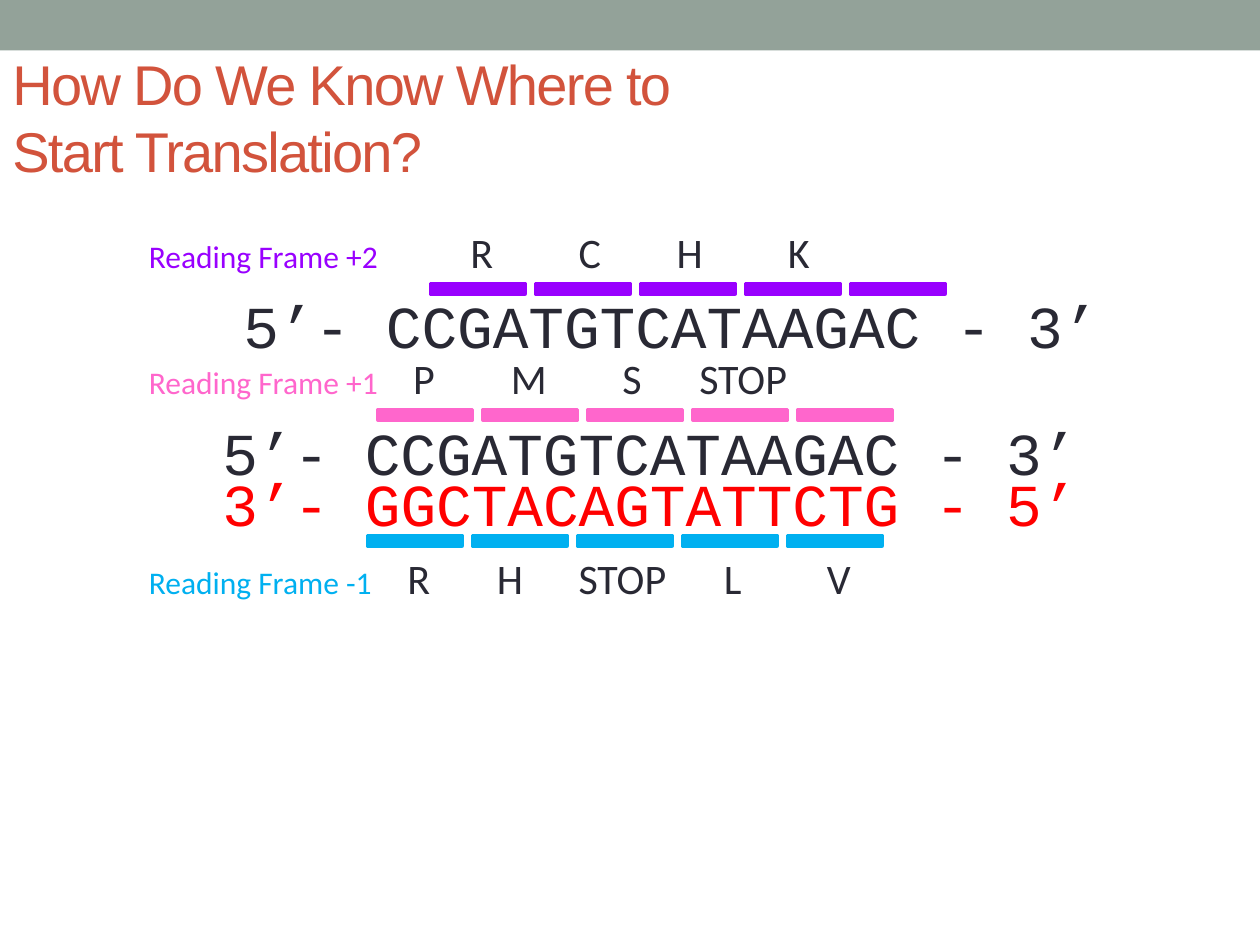
import pptx
import pptx.dml.color
import pptx.enum.shapes
import pptx.enum.text
import pptx.oxml
import pptx.oxml.ns
import pptx.util
from lxml import etree

PX = 7620  # EMU per px, 120 px to the inch
COLORS = {
    "band": "93A299",
    "title": "D2533C",
    "text": "292934",
    "complement": "FF0000",
    "plus1": "FF66CC",
    "plus2": "9900FF",
    "minus1": "00B0F0",
}

# Strand: text, colour, left, top, width
STRANDS = [
    ("5’- CCGATGTCATAAGAC - 3’", "text", 220, 269, 840),
    ("5’- CCGATGTCATAAGAC - 3’", "text", 200, 390, 840),
    ("3’- GGCTACAGTATTCTG - 5’", "complement", 200, 439, 880),
]

# Frame: name, colour, label top, first bar left, bar top, {tab centre: amino acid}
FRAMES = [
    ("Reading Frame +2", "plus2", 210, 410, 270,
     {317: "R", 420: "C", 515: "H", 619: "K"}),
    ("Reading Frame +1", "plus1", 330, 360, 390,
     {262: "P", 362: "M", 460: "S", 566: "STOP"}),
    ("Reading Frame -1", "minus1", 520, 350, 510,
     {257: "R", 344: "H", 451: "STOP", 556: "L", 657: "V"}),
]
CODONS = 5
BAR_WIDTH, BAR_HEIGHT, BAR_PITCH = 90, 10, 100


def rgb(name):
    return pptx.dml.color.RGBColor.from_string(COLORS[name])


def box_of(*lengths):
    return [length * PX for length in lengths]


def add_text_box(page, *place):
    frame = page.shapes.add_textbox(*box_of(*place)).text_frame
    frame.word_wrap = True
    return frame


def add_span(para, text, color, **formats):
    span = para.add_run()
    span.text = text
    for name, value in formats.items():
        setattr(span.font, name, value)
    span.font.color.rgb = rgb(color)
    return span


def add_bar(shapes, color, *place, outline=None):
    bar = shapes.add_shape(
        pptx.enum.shapes.MSO_SHAPE.RECTANGLE, *box_of(*place))
    bar.shadow.inherit = False
    bar.fill.solid()
    bar.fill.fore_color.rgb = rgb(color)
    if outline:
        bar.line.color.rgb = rgb(color)
        bar.line.width = pptx.util.Pt(outline)
    else:
        bar.line.fill.background()


def add_title(page, lines):
    frame = add_text_box(page, 0, 36, 1200, 150)
    frame.vertical_anchor = pptx.enum.text.MSO_ANCHOR.MIDDLE
    para = frame.paragraphs[0]
    para.line_spacing = pptx.util.Pt(38.3)
    for index, line in enumerate(lines):
        if index:
            para.add_line_break()
        span = add_span(para, line, "title", name="Arial",
                        size=pptx.util.Pt(32))
        span.font._element.set("spc", "-100")


def add_strand(page, text, color, left, top, width):
    para = add_text_box(page, left, top, width, 80).paragraphs[0]
    add_span(para, text, color, name="Courier New", size=pptx.util.Pt(34))


def add_tab_stops(para, centres):
    tabs = etree.SubElement(para._p.get_or_add_pPr(),
                            pptx.oxml.ns.qn("a:tabLst"))
    for centre in centres:
        etree.SubElement(tabs, pptx.oxml.ns.qn("a:tab"),
                         pos=str(centre * PX), algn="ctr")


def add_reading_frame(page, name, color, top, bar_left, bar_top, acids):
    # Name and amino acids on one line, each acid centred on a tab stop
    para = add_text_box(page, 130, top, 720, 60).paragraphs[0]
    add_tab_stops(para, acids)
    add_span(para, name, color, name="Calibri", size=pptx.util.Pt(18))
    for acid in acids.values():
        add_span(para, "\t" + acid, "text", name="Calibri",
                 size=pptx.util.Pt(24))

    # One bar per codon
    group = page.shapes.add_group_shape()
    for codon in range(CODONS):
        add_bar(group.shapes, color, bar_left + codon * BAR_PITCH, bar_top,
                BAR_WIDTH, BAR_HEIGHT, outline=2.08)


def main():
    deck = pptx.Presentation()
    deck.slide_width, deck.slide_height = box_of(1200, 900)
    page = deck.slides.add_slide(deck.slide_layouts[6])

    # Header
    add_bar(page.shapes, "band", 0, 0, 1200, 48)
    add_title(page, ["How Do We Know Where to ", "Start Translation?"])

    # Sequences and their reading frames
    for strand in STRANDS:
        add_strand(page, *strand)
    for frame in FRAMES:
        add_reading_frame(page, *frame)

    deck.save("out.pptx")


if __name__ == "__main__":
    main()
